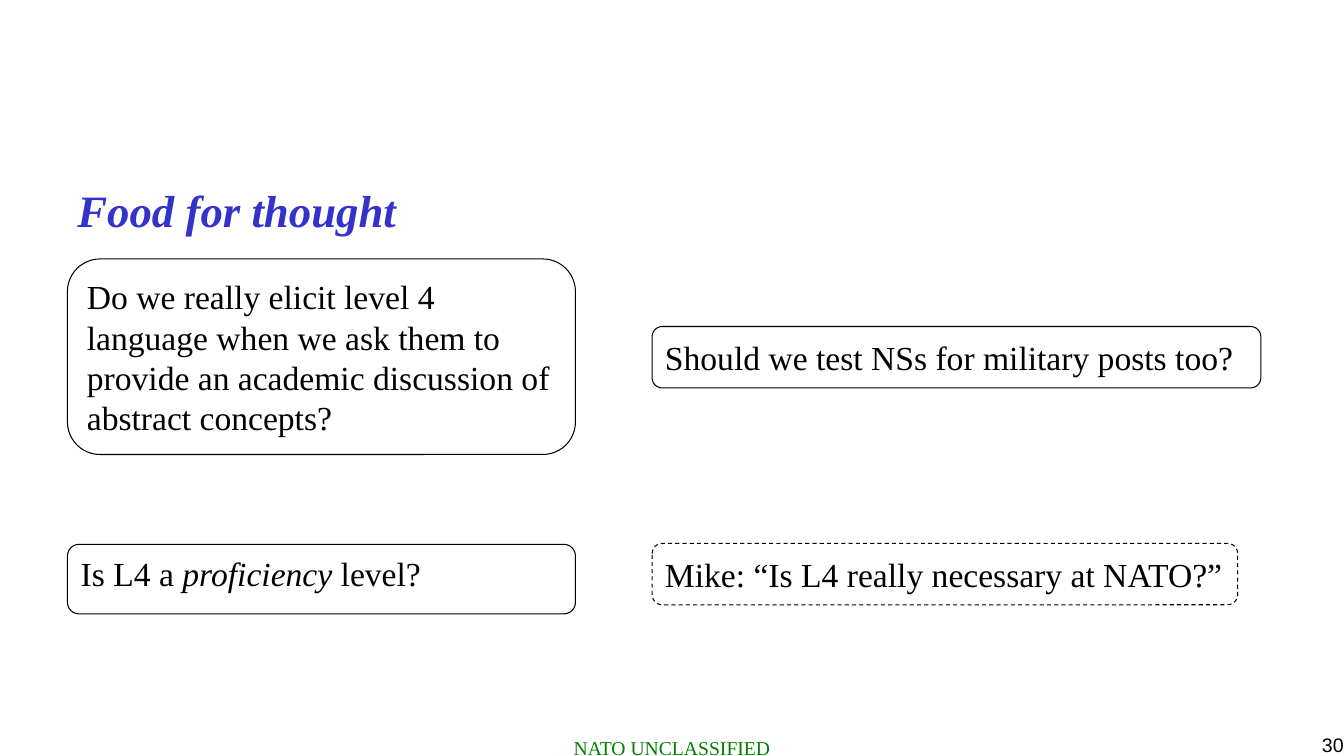
from pptx import Presentation
from pptx.dml.color import RGBColor
from pptx.enum.dml import MSO_LINE
from pptx.enum.shapes import MSO_SHAPE
from pptx.enum.text import MSO_ANCHOR, PP_ALIGN
from pptx.util import Pt

ROUNDED = MSO_SHAPE.ROUNDED_RECTANGLE
DASH = MSO_LINE.DASH
TOP, MIDDLE = MSO_ANCHOR.TOP, MSO_ANCHOR.MIDDLE
LEFT, CENTER, RIGHT = PP_ALIGN.LEFT, PP_ALIGN.CENTER, PP_ALIGN.RIGHT
SERIF, SANS = "Times New Roman", "Arial"
COLORS = {"title": "3333CC", "marking": "008000", "ink": "000000", "paper": "FFFFFF"}


def rgb(name):
    """Return the named colour."""
    return RGBColor.from_string(COLORS[name])


def style(p, size, color, font=SERIF, align=LEFT):
    """Set alignment and font of a paragraph."""
    p.alignment = align
    p.font.name = font
    p.font.size = Pt(size)
    p.font.color.rgb = rgb(color)


def add_label(s, box, text, size, color, font=SERIF, align=LEFT):
    """Add a one-paragraph text box and return its paragraph."""
    tf = s.shapes.add_textbox(*map(Pt, box)).text_frame
    tf.word_wrap = True
    p = tf.paragraphs[0]
    p.text = text
    style(p, size, color, font, align)
    return p


def add_title(s, box):
    """Add the slide heading."""
    p = add_label(s, box, "Food for thought", 32, "title")
    p.font.bold = p.font.italic = True


def add_question(s, box, runs, anchor=MIDDLE, dash=None):
    """Add a rounded question box from (text, italic) runs."""
    sp = s.shapes.add_shape(ROUNDED, *map(Pt, box))
    sp.shadow.inherit = False
    sp.fill.solid()
    sp.fill.fore_color.rgb = rgb("paper")
    sp.line.color.rgb = rgb("ink")
    sp.line.width = Pt(0.75)
    if dash:
        sp.line.dash_style = dash
    tf = sp.text_frame
    tf.word_wrap = True
    tf.vertical_anchor = anchor
    p = tf.paragraphs[0]
    style(p, 24, "ink")
    for text, italic in runs:
        r = p.add_run()
        r.text = text
        if italic:
            r.font.italic = True


def add_questions(s, box):
    """Place the four question boxes in two columns."""
    x, y, w, h = box
    right = x + 417.6
    add_question(s, (x, y, 362.9, 139.7), [
        ("Do we really elicit level 4 language when we ask them to "
         "provide an academic discussion of abstract concepts?", False)])
    add_question(s, (x, y + h - 49.7, 362.9, 49.7), [
        ("Is L4 a ", False), ("proficiency ", True), ("level?", False)], TOP)
    add_question(s, (right, y + 48.2, x + w - right, 43.9), [
        ("Should we test NSs for military posts too?", False)])
    add_question(s, (right, y + h - 50.4, 418.3, 43.9), [
        ("Mike: “Is L4 really necessary at NATO?”", False)], dash=DASH)


def add_footer(s, box):
    """Add the centred marking and the page number at the right edge."""
    x, y, w, h = box
    add_label(s, (x + (w - 303.8) / 2, y, 303.8, h),
              "NATO UNCLASSIFIED", 14, "marking", align=CENTER)
    add_label(s, (x + w - 199.6, y - 2.2, 206.6, 37.4),
              "30", 14, "ink", SANS, RIGHT)


def main():
    """Build the slide and save it."""
    prs = Presentation()
    prs.slide_width, prs.slide_height = Pt(960), Pt(540)
    s = prs.slides.add_slide(prs.slide_layouts[6])
    add_title(s, (48.2, 127, 864, 354))
    add_questions(s, (48.2, 185, 852.5, 253.5))
    add_footer(s, (0, 522, 960, 22.3))
    prs.save("out.pptx")


if __name__ == "__main__":
    main()
